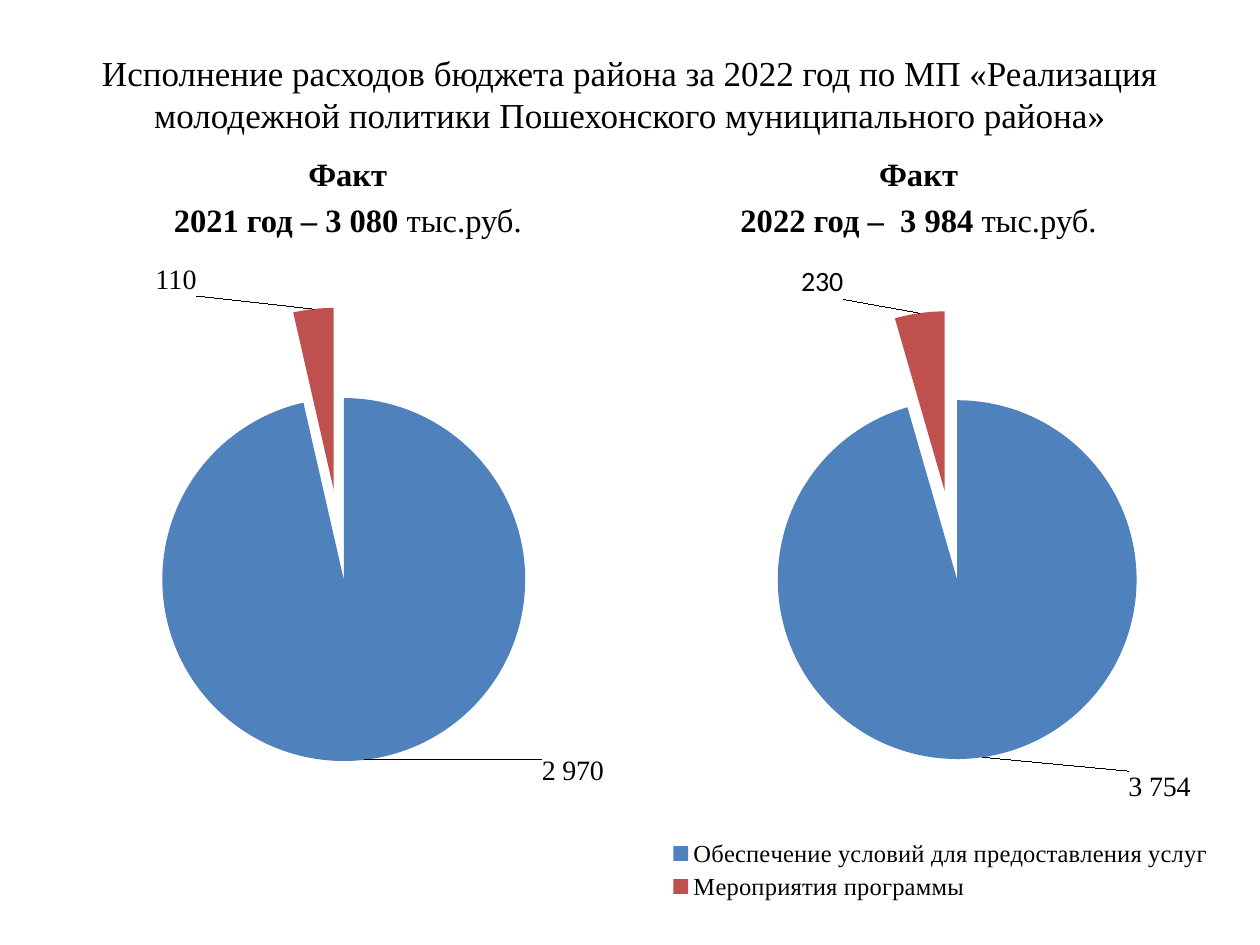
from lxml import etree
from pptx import Presentation
from pptx import util as u
from pptx.chart.data import CategoryChartData
from pptx.dml.color import RGBColor
from pptx.enum import chart as ch, text
from pptx.oxml.ns import qn

WIDTH, HEIGHT = 10, 7.5
SERIF, SANS = "Times New Roman", "Calibri"
COLORS = {"ink": "000000", "services": "4F81BD", "events": "C0504D"}
CATEGORIES = ["Обеспечение условий для предоставления услуг", "Мероприятия программы"]


def style_font(font, size, name=SERIF, bold=False, color="ink"):
    font.size, font.name, font.bold = u.Pt(size), name, bold
    font.color.rgb = RGBColor.from_string(COLORS[color])


def add_text(slide, box, paragraphs, size, anchor, space_before=0):
    """Each paragraph is a list of (wording, bold) runs."""
    frame = slide.shapes.add_textbox(*map(u.Inches, box)).text_frame
    frame.word_wrap = True
    frame.vertical_anchor = anchor
    for index, runs in enumerate(paragraphs):
        paragraph = frame.paragraphs[0] if index == 0 else frame.add_paragraph()
        paragraph.alignment = text.PP_ALIGN.CENTER
        paragraph.space_before = u.Pt(space_before)
        for wording, bold in runs:
            run = paragraph.add_run()
            run.text = wording
            style_font(run.font, size, bold=bold)


def set_layout(parent, position, **settings):
    """Place a chart part by shares of the chart; position is its index among the children."""
    for old in parent.findall(qn("c:layout")):
        parent.remove(old)
    layout = etree.Element(qn("c:layout"))
    manual = etree.SubElement(layout, qn("c:manualLayout"))
    for key, value in settings.items():
        etree.SubElement(manual, qn(f"c:{key}")).set("val", str(value))
    parent.insert(position, layout)


def area(x, y, w, h):
    return dict(xMode="edge", yMode="edge", x=x, y=y, w=w, h=h)


def add_pie(slide, box, categories, values, plot_area, labels):
    """Each label is (own text or None, font, x offset, y offset)."""
    data = CategoryChartData(number_format="General")
    data.categories = categories
    data.add_series("Series 1", values)
    chart = slide.shapes.add_chart(
        ch.XL_CHART_TYPE.PIE, *map(u.Inches, box), data).chart
    chart.has_title = False
    chart.has_legend = False
    style_font(chart.font, 10, SANS)
    plot = chart.plots[0]
    plot.vary_by_categories = True
    series = plot.series[0]
    series.data_labels.show_value = True
    style_font(series.data_labels.font, 16)

    for index, (color, (wording, font, _, _)) in enumerate(zip(("services", "events"), labels)):
        point = series.points[index]
        point.format.fill.solid()
        point.format.fill.fore_color.rgb = RGBColor.from_string(COLORS[color])
        label = point.data_label
        if wording:
            run = label.text_frame.paragraphs[0].add_run()
            run.text = wording
            style_font(run.font, 16, font)
        else:
            style_font(label.font, 16, font)
        label.position = ch.XL_LABEL_POSITION.OUTSIDE_END

    explosion = etree.Element(qn("c:explosion"), val="25")
    chart.element.xpath(".//c:ser/c:dPt")[0].addprevious(explosion)
    set_layout(chart.element.xpath(".//c:plotArea")[0], 0,
               layoutTarget="inner", **area(*plot_area))
    for label, (_, _, x, y) in zip(chart.element.xpath(".//c:dLbl"), labels):
        set_layout(label, 1, x=x, y=y)
    return chart


def add_legend(chart, place):
    chart.has_legend = True
    chart.legend.position = ch.XL_LEGEND_POSITION.BOTTOM
    chart.legend.include_in_layout = False
    style_font(chart.legend.font, 14)
    set_layout(chart.element.xpath(".//c:legend")[0], 1, **area(*place))


def main():
    deck = Presentation()
    deck.slide_width, deck.slide_height = u.Inches(WIDTH), u.Inches(HEIGHT)
    slide = deck.slides.add_slide(deck.slide_layouts[6])

    title = ("Исполнение расходов бюджета района за 2022 год по МП «Реализация "
             "молодежной политики Пошехонского муниципального района»")
    add_text(slide, (0.05 * WIDTH, 0.16, 0.9 * WIDTH, 1.17), [[(title, False)]],
             20, text.MSO_ANCHOR.MIDDLE)

    totals = ["2021 год – 3 080", "2022 год –  3 984"]
    for column, total in enumerate(totals):
        add_text(slide, (0.55 + 4.53 * column, 1.25, 4.42, 0.7),
                 [[("Факт", True)], [(total, True), (" тыс.руб.", False)]],
                 18.6, text.MSO_ANCHOR.BOTTOM, space_before=4)

    pie_2022 = add_pie(slide, (5.16, 2.03, 4.61, 5.16), CATEGORIES, (2671, 125),
                       (0.129, 0.085, 0.778, 0.69),
                       [("3 754", SERIF, 0.25, 0.01), ("230", SANS, -0.13, -0.01)])
    add_legend(pie_2022, (0.03, 0.89, 0.94, 0.11))
    add_pie(slide, (0.31, 2.03, 4.84, 4.53), ["1", "2"], (2970, 110),
            (0.097, 0.091, 0.789, 0.795),
            [("2 970", SERIF, 0.29, -0.02), (None, SERIF, -0.19, -0.01)])

    deck.save("out.pptx")


if __name__ == "__main__":
    main()
